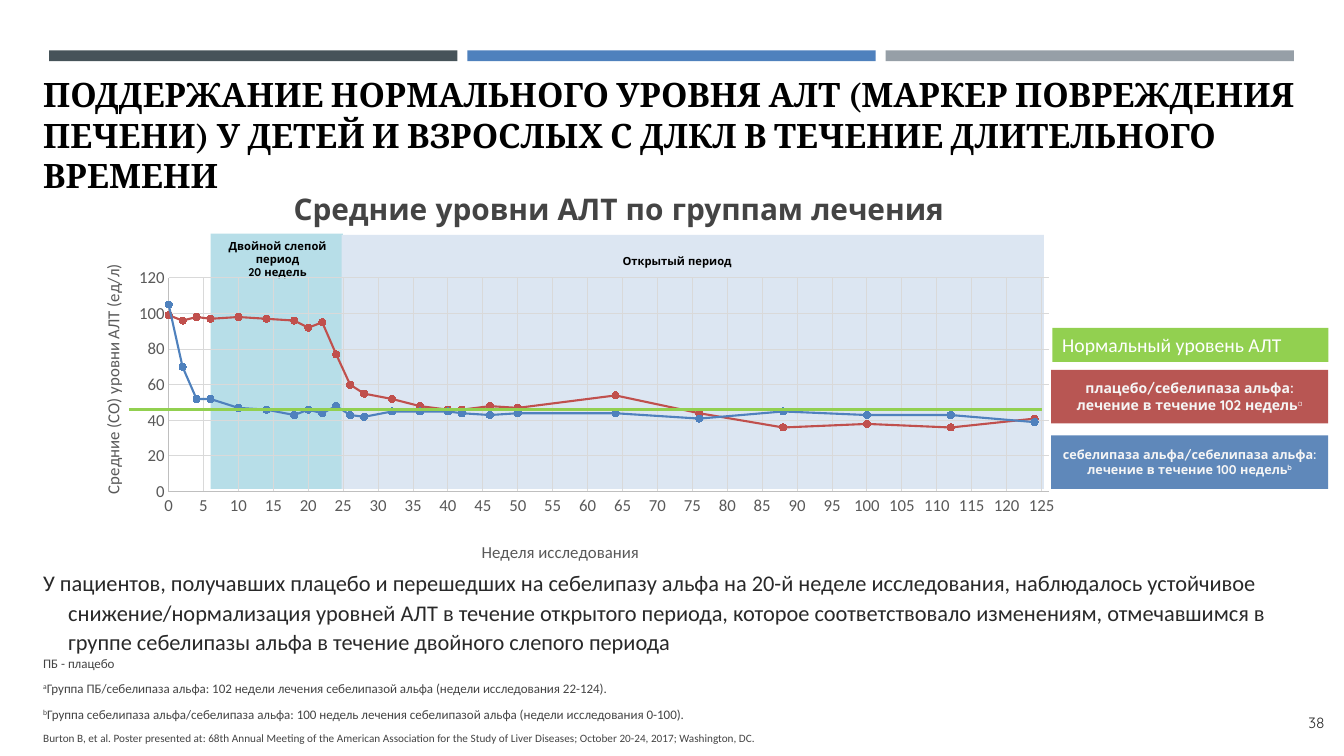
from dataclasses import dataclass
from typing import Optional

from lxml import etree
from pptx import Presentation
from pptx.chart.data import XyChartData
from pptx.dml.color import RGBColor
from pptx.enum.chart import XL_CHART_TYPE, XL_MARKER_STYLE, XL_TICK_MARK
from pptx.enum.shapes import MSO_CONNECTOR, MSO_SHAPE
from pptx.enum.text import MSO_ANCHOR, PP_ALIGN
from pptx.oxml import parse_xml
from pptx.oxml.ns import nsdecls, qn
from pptx.util import Cm, Pt

RECTANGLE = MSO_SHAPE.RECTANGLE
TOP, MIDDLE, BOTTOM = MSO_ANCHOR.TOP, MSO_ANCHOR.MIDDLE, MSO_ANCHOR.BOTTOM
LEFT, CENTER, RIGHT = PP_ALIGN.LEFT, PP_ALIGN.CENTER, PP_ALIGN.RIGHT
NO_TICKS = XL_TICK_MARK.NONE


@dataclass(frozen=True)
class Theme:
    body_font: str = "Calibri"
    title_font: str = "Cambria"
    label_font: str = "Quicksand"
    black: str = "000000"
    white: str = "FFFFFF"
    pale: str = "F5F5F5"
    text: str = "292929"
    muted: str = "444444"
    axis_text: str = "595959"
    axis_line: str = "BFBFBF"
    grid: str = "D9D9D9"
    normal: str = "92D050"
    blue: str = "4F81BD"
    red: str = "C0504D"
    title_size: float = 24
    chart_title_size: float = 21.3
    body_size: float = 16
    normal_size: float = 14
    axis_size: float = 12
    number_size: float = 10.7
    note_size: float = 9.3
    small_size: float = 8


THEME = Theme()


@dataclass(frozen=True)
class Area:
    """Place of an object, in centimetres."""
    left: float
    top: float
    width: float
    height: float


@dataclass(frozen=True)
class Period:
    area: Area
    fill: str
    label_area: Area
    lines: tuple[str, ...]


@dataclass(frozen=True)
class Arm:
    top: float
    fill: str
    text: str
    mark: str
    mark_bold: bool
    size: float


@dataclass(frozen=True)
class Curve:
    name: str
    color: str
    values: tuple[int, ...]


HEADER_FILLS = ("465359", THEME.blue, "969FA7")
PERIODS = (
    Period(Area(5.31, 5.89, 3.33, 6.43), "B7DEE8", Area(5.38, 5.92, 3.23, 0.86),
           ("Двойной слепой период", "20 недель")),
    Period(Area(8.61, 5.92, 17.7, 6.4), "DCE6F2", Area(13.13, 6.3, 7.87, 0.53),
           ("Открытый период",)),
)
ARMS = (
    Arm(10.97, "5F88BA", "себелипаза альфа/себелипаза альфа: лечение в течение 100 недель",
        "b", True, 9),
    Arm(9.32, "B85653", "плацебо/себелипаза альфа: лечение в течение 102 недель",
        "a", False, 10),
)
WEEKS = (0, 2, 4, 6, 10, 14, 18, 20, 22, 24, 26, 28,
         32, 36, 40, 42, 46, 50, 64, 76, 88, 100, 112, 124)
CURVES = (
    Curve("Series 1", THEME.blue, (105, 70, 52, 52, 47, 46, 43, 46, 44, 48, 43, 42,
                                   45, 45, 45, 44, 43, 44, 44, 41, 45, 43, 43, 39)),
    Curve("Series 2", THEME.red, (99, 96, 98, 97, 98, 97, 96, 92, 95, 77, 60, 55,
                                  52, 48, 46, 46, 48, 47, 54, 44, 36, 38, 36, 41)),
)
FOOTNOTES = (
    ("", "ПБ - плацебо", THEME.note_size),
    ("а", "Группа ПБ/себелипаза альфа: 102 недели лечения себелипазой альфа "
     "(недели исследования 22-124).", THEME.note_size),
    ("b", "Группа себелипаза альфа/себелипаза альфа: 100 недель лечения себелипазой альфа "
     "(недели исследования 0-100).", THEME.note_size),
    ("", "Burton B, et al. Poster presented at: 68th Annual Meeting of the American Association "
     "for the Study of Liver Diseases; October 20-24, 2017; Washington, DC.", THEME.small_size),
)


def rgb(color: str) -> RGBColor:
    return RGBColor.from_string(color)


def add_box(page, area: Area, fill: Optional[str] = None, anchor=TOP, tight: bool = False):
    """Add a filled rectangle, or a text box when there is no fill."""
    place = [Cm(n) for n in (area.left, area.top, area.width, area.height)]
    if fill is None:
        box = page.shapes.add_textbox(*place)
    else:
        box = page.shapes.add_shape(RECTANGLE, *place)
        box.shadow.inherit = False
        box.fill.solid()
        box.fill.fore_color.rgb = rgb(fill)
        box.line.fill.background()
    frame = box.text_frame
    frame.word_wrap = True
    frame.vertical_anchor = anchor
    if tight:
        frame.margin_left = frame.margin_right = Cm(0.18)
        frame.margin_top = frame.margin_bottom = Cm(0.1)
    return box


def add_para(box, align=LEFT, line_spacing: float = 1, after: float = 0):
    """Give the first paragraph while it is empty, then new ones."""
    frame = box.text_frame
    para = frame.paragraphs[0] if not frame.text else frame.add_paragraph()
    para.alignment = align
    para.line_spacing = line_spacing
    para.space_after = Pt(after)
    return para


def add_span(para, text: str, *, size: float, color: str, font: str = THEME.body_font,
             bold: bool = False, raised: bool = False):
    span = para.add_run()
    span.text = text
    span.font.size = Pt(size)
    span.font.name = font
    span.font.bold = bold
    span.font.color.rgb = rgb(color)
    if raised:
        span._r.get_or_add_rPr().set("baseline", "30000")


def place_layout(parent, before: tuple[str, ...], x: float, y: float, size=None) -> None:
    """Set a manual chart layout, in fractions, ahead of the named siblings."""
    for old in parent.findall(qn("c:layout")):
        parent.remove(old)
    parts = [("xMode", "edge"), ("yMode", "edge"), ("x", x), ("y", y)]
    if size:
        parts = [("layoutTarget", "inner"), *parts, ("w", size[0]), ("h", size[1])]
    inner = "".join(f'<c:{tag} val="{value}"/>' for tag, value in parts)
    layout = parse_xml(f'<c:layout {nsdecls("c")}><c:manualLayout>{inner}'
                       '</c:manualLayout></c:layout>')
    names = [qn(name) for name in before]
    follower = next((child for child in parent if child.tag in names), None)
    if follower is None:
        parent.append(layout)
    else:
        follower.addprevious(layout)


def style_axis(axis, title: str, title_at: tuple[float, float], top: int, step: int) -> None:
    axis.minimum_scale, axis.maximum_scale, axis.major_unit = 0, top, step
    axis.major_tick_mark = axis.minor_tick_mark = NO_TICKS
    axis.has_major_gridlines = True
    for line, color in ((axis.format.line, THEME.axis_line),
                        (axis.major_gridlines.format.line, THEME.grid)):
        line.color.rgb = rgb(color)
        line.width = Pt(0.75)
    axis.tick_labels.font.size = Pt(THEME.axis_size)
    axis.tick_labels.font.name = THEME.body_font
    axis.tick_labels.font.color.rgb = rgb(THEME.axis_text)
    para = axis.axis_title.text_frame.paragraphs[0]
    add_span(para, title, size=THEME.axis_size, color=THEME.axis_text)
    place_layout(axis.axis_title._element, ("c:overlay", "c:spPr", "c:txPr"), *title_at)


def add_level_chart(page) -> None:
    data = XyChartData()
    for curve in CURVES:
        series = data.add_series(curve.name)
        for week, level in zip(WEEKS, curve.values):
            series.add_data_point(week, level)
    chart = page.shapes.add_chart(XL_CHART_TYPE.XY_SCATTER_LINES, Cm(1.73), Cm(5.31),
                                  Cm(25.2), Cm(10.57), data).chart
    chart.has_legend = chart.has_title = False
    chart.font.name = THEME.body_font
    chart.font.size = Pt(10)
    chart.plots[0].vary_by_categories = False
    for series, curve in zip(chart.plots[0].series, CURVES):
        series.smooth = False
        series.format.line.color.rgb = rgb(curve.color)
        series.format.line.width = Pt(1.5)
        series.marker.style = XL_MARKER_STYLE.CIRCLE
        series.marker.size = 5
        series.marker.format.fill.solid()
        series.marker.format.fill.fore_color.rgb = rgb(curve.color)
        series.marker.format.line.color.rgb = rgb(curve.color)
    style_axis(chart.category_axis, "Неделя исследования", (0.41, 0.78), 126, 5)
    style_axis(chart.value_axis, "Средние (СО) уровни АЛТ (ед/л)", (0.03, 0.12), 120, 20)
    plot_area = chart._chartSpace.chart.plotArea
    place_layout(plot_area, ("c:scatterChart",), 0.1, 0.16, (0.88, 0.51))


def add_normal_line(page) -> None:
    line = page.shapes.add_connector(MSO_CONNECTOR.STRAIGHT, Cm(3.25), Cm(10.31),
                                     Cm(26.26), Cm(10.31))
    line.line.color.rgb = rgb(THEME.normal)
    line.line.width = Pt(2.25)
    etree.SubElement(line._element.spPr, qn("a:effectLst"))


def build_page(page) -> None:
    for index, fill in enumerate(HEADER_FILLS):
        add_box(page, Area(1.24 + 10.54 * index, 1.27, 10.29, 0.27), fill)
    number = add_box(page, Area(32.36, 17.68, 1.27, 1.04), anchor=MIDDLE)
    add_span(add_para(number, RIGHT), "38", size=THEME.number_size, color=THEME.text,
             font=THEME.label_font)
    notes = add_box(page, Area(0.84, 17.07, 22.81, 1.83), anchor=BOTTOM)
    for mark, text, size in FOOTNOTES:
        para = add_para(notes, line_spacing=1.1, after=6)
        if mark:
            add_span(para, mark, size=size, color=THEME.muted, raised=True)
        add_span(para, text, size=size, color=THEME.muted)
    heading = add_box(page, Area(4.5, 4.8, 22.2, 0.91))
    heading.text_frame.margin_top = heading.text_frame.margin_bottom = 0
    add_span(add_para(heading, CENTER), "Средние уровни АЛТ по группам лечения",
             size=THEME.chart_title_size, color=THEME.muted, font=THEME.label_font, bold=True)
    for period in PERIODS:
        add_box(page, period.area, period.fill)
    for period in PERIODS:
        label = add_box(page, period.label_area, tight=True)
        for text in period.lines:
            add_span(add_para(label, CENTER), text, size=THEME.small_size, color=THEME.black,
                     font=THEME.label_font, bold=True)
    for arm in ARMS:
        box = add_box(page, Area(26.49, arm.top, 6.98, 1.35), arm.fill, MIDDLE, tight=True)
        para = add_para(box, CENTER)
        look = {"size": arm.size, "color": THEME.pale, "font": THEME.label_font}
        add_span(para, arm.text, bold=True, **look)
        add_span(para, arm.mark, bold=arm.mark_bold, raised=True, **look)
    add_level_chart(page)
    body = add_box(page, Area(0.84, 14, 32.23, 2.64), anchor=BOTTOM)
    para = add_para(body, line_spacing=1.1, after=6)
    para.space_before = Pt(4)
    indent = Cm(0.63)
    para._p.get_or_add_pPr().set("marL", str(indent))
    para._p.get_or_add_pPr().set("indent", str(-indent))
    add_span(para, "У пациентов, получавших плацебо и перешедших на себелипазу альфа на 20-й неделе "
             "исследования, наблюдалось устойчивое снижение/нормализация уровней АЛТ в течение "
             "открытого периода, которое соответствовало изменениям, отмечавшимся в группе "
             "себелипазы альфа в течение двойного слепого периода",
             size=THEME.body_size, color=THEME.text)
    title = add_box(page, Area(0.84, 1.75, 32.51, 2.31))
    add_span(add_para(title), "ПОДДЕРЖАНИЕ НОРМАЛЬНОГО УРОВНЯ АЛТ (МАРКЕР ПОВРЕЖДЕНИЯ ПЕЧЕНИ) "
             "У ДЕТЕЙ И ВЗРОСЛЫХ С ДЛКЛ В ТЕЧЕНИЕ ДЛИТЕЛЬНОГО ВРЕМЕНИ",
             size=THEME.title_size, color=THEME.black, font=THEME.title_font, bold=True)
    add_normal_line(page)
    normal = add_box(page, Area(26.52, 8.26, 6.96, 0.86), THEME.normal)
    add_span(add_para(normal), "Нормальный уровень АЛТ", size=THEME.normal_size,
             color=THEME.white)


def main() -> None:
    deck = Presentation()
    deck.slide_width, deck.slide_height = Cm(33.87), Cm(19.05)
    build_page(deck.slides.add_slide(deck.slide_layouts[6]))
    deck.save("out.pptx")


if __name__ == "__main__":
    main()
